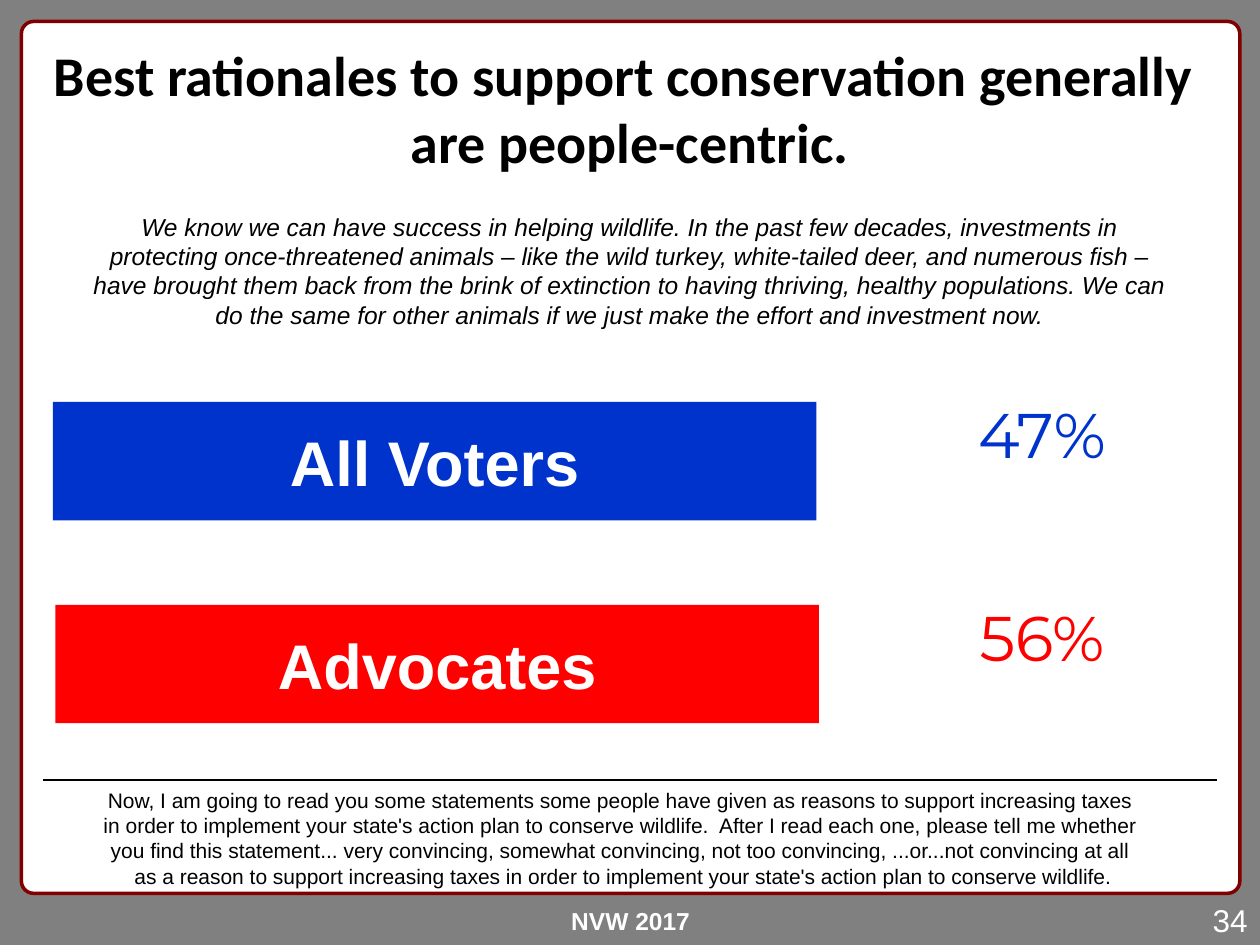
from lxml import etree
from pptx import Presentation
from pptx import util as u
from pptx.dml.color import RGBColor
from pptx.enum import shapes, text
from pptx.oxml.ns import qn

I = u.Inches
HUES = {"gray": "808080", "white": "FFFFFF", "maroon": "800000",
        "black": "000000", "blue": "0033CC", "red": "FF0000"}
ALIGN = text.PP_ALIGN


def hue(name):
    return RGBColor.from_string(HUES[name])


def write(shape, words, size, tone, face="Arial", bold=False, slant=False,
          align=ALIGN.CENTER, anchor=text.MSO_ANCHOR.TOP, wrap=True, pad=None):
    frame = shape.text_frame
    frame.text = words
    frame.word_wrap = wrap
    frame.auto_size = text.MSO_AUTO_SIZE.NONE
    frame.vertical_anchor = anchor
    if pad is not None:
        frame.margin_left = frame.margin_right = I(pad)
        frame.margin_top = frame.margin_bottom = I(pad)
    for para in frame.paragraphs:
        para.alignment = align
        for run in para.runs:
            font = run.font
            font.name, font.size = face, u.Pt(size)
            font.bold, font.italic = bold, slant
            font.color.rgb = hue(tone)


deck = Presentation()
deck.slide_width, deck.slide_height = I(10), I(7.5)
slide = deck.slides.add_slide(deck.slide_layouts[5])
slide.background.fill.solid()
slide.background.fill.fore_color.rgb = hue("gray")
parts = slide.shapes

panel = parts.add_shape(shapes.MSO_SHAPE.ROUNDED_RECTANGLE,
                        I(0.17), I(0.17), I(9.67), I(6.92))
panel.adjustments[0] = 0.014
panel.shadow.inherit = False
panel.fill.solid()
panel.fill.fore_color.rgb = hue("white")
panel.line.color.rgb = hue("maroon")
panel.line.width = u.Pt(2)

foot = parts.add_textbox(I(2.42), I(7.14), I(5.17), I(0.33))
write(foot, "NVW 2017", 14, "white", bold=True, wrap=False)
page = parts.add_textbox(I(8.46), I(7.1), I(1.54), I(0.4))
write(page, "34", 18, "white", align=ALIGN.RIGHT)

title = parts.title
title.left, title.top, title.width, title.height = I(0.17), I(0.27), I(9.66), I(1.18)
write(title, "Best rationales to support conservation generally \nare people-centric.",
      32, "black", face="Calibri", bold=True)
parts._spTree.append(title._element)

quote = parts.add_textbox(I(0.73), I(1.68), I(8.54), I(0.94))
write(quote, "We know we can have success in helping wildlife. In the past few decades, "
      "investments in protecting once-threatened animals – like the wild turkey, "
      "white-tailed deer, and numerous fish – have brought them back from the brink of "
      "extinction to having thriving, healthy populations. We can do the same for other "
      "animals if we just make the effort and investment now.",
      14, "black", slant=True, pad=0)

groups = [("All Voters", "47%", "blue", 0.42, 3.19),
          ("Advocates", "56%", "red", 0.44, 4.8)]
for label, share, tone, left, top in groups:
    bar = parts.add_shape(shapes.MSO_SHAPE.RECTANGLE, I(left), I(top), I(6.06), I(0.94))
    bar.shadow.inherit = False
    bar.fill.solid()
    bar.fill.fore_color.rgb = hue(tone)
    bar.line.fill.background()
    write(bar, label, 36, "white", bold=True, anchor=text.MSO_ANCHOR.MIDDLE)
    value = parts.add_textbox(I(7.08), I(top - 0.1), I(2.38), I(1.14))
    write(value, share, 36, tone, face="Montserrat", wrap=False)

rule = parts.add_connector(shapes.MSO_CONNECTOR.STRAIGHT,
                           I(0.34), I(6.19), I(9.66), I(6.19))
rule.line.color.rgb = hue("black")
rule.line.width = u.Pt(0.88)
etree.SubElement(rule._element.spPr, qn("a:effectLst"))

ask = [
    (8.25, "Now, I am going to read you some statements some people have given as "
           "reasons to support increasing taxes "),
    (8.32, "in order to implement your state's action plan to conserve wildlife.  "
           "After I read each one, please tell me whether "),
    (8.21, "you find this statement... very convincing, somewhat convincing, "
           "not too convincing, ...or...not convincing at all "),
    (7.82, "as a reason to support increasing taxes in order to implement your "
           "state's action plan to conserve wildlife."),
]
for row, (width, words) in enumerate(ask):
    line = parts.add_textbox(I(4.95 - width / 2), I(6.25 + 0.2 * row), I(width), I(0.2))
    write(line, words, 12, "black", wrap=False, pad=0)

deck.save("out.pptx")
